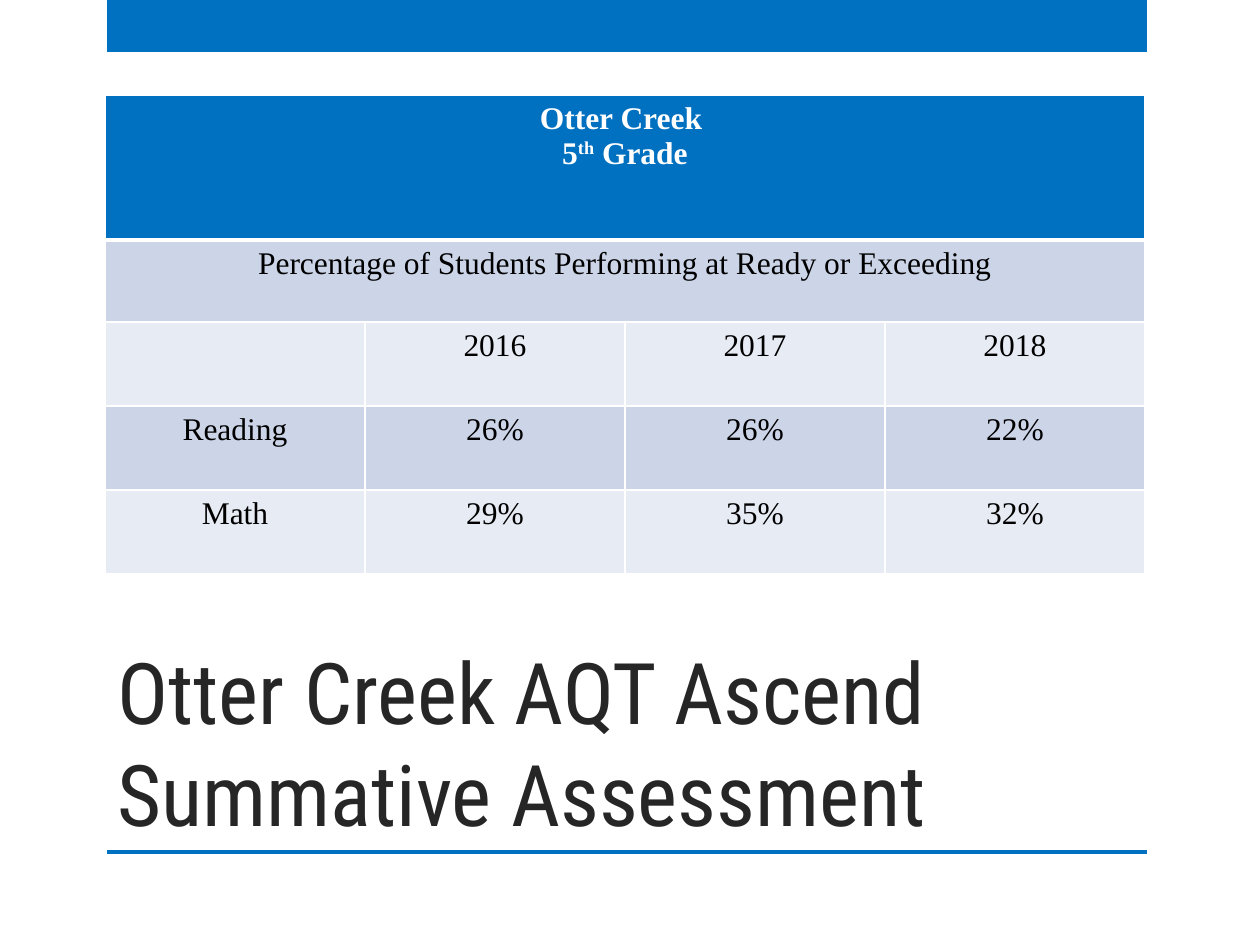
import pptx
import pptx.util
import pptx.dml.color
import pptx.enum.shapes
import pptx.enum.text
import pptx.oxml

PX = 914400 // 126
COLORS = {
    "blue": "0070C0",
    "dark": "CCD5E8",
    "light": "E7EBF4",
    "white": "FFFFFF",
    "black": "000000",
    "title": "262626",
}
ROWS = [
    ["", "2016", "2017", "2018"],
    ["Reading", "26%", "26%", "22%"],
    ["Math", "29%", "35%", "32%"],
]
HEIGHTS = [145, 82, 84, 84, 84]
COLS = 4
NS = "http://schemas.openxmlformats.org/drawingml/2006/main"


def color(name):
    return pptx.dml.color.RGBColor.from_string(COLORS[name])


def scale(*sizes):
    return [size * PX for size in sizes]


def add_bar(slide, *box):
    kind = pptx.enum.shapes.MSO_SHAPE.RECTANGLE
    bar = slide.shapes.add_shape(kind, *scale(*box))
    bar.shadow.inherit = False
    bar.fill.solid()
    bar.fill.fore_color.rgb = color("blue")
    bar.line.fill.background()


def set_title(slide, text, *box):
    title = slide.shapes.title
    title.left, title.top, title.width, title.height = scale(*box)
    frame = title.text_frame
    frame.text = text
    frame.word_wrap = True
    frame.auto_size = pptx.enum.text.MSO_AUTO_SIZE.NONE
    frame.vertical_anchor = pptx.enum.text.MSO_ANCHOR.BOTTOM
    para = frame.paragraphs[0]
    para.alignment = pptx.enum.text.PP_ALIGN.LEFT
    para.font.name = "Roboto Condensed"
    para.font.size = pptx.util.Pt(48.6)
    para.font.color.rgb = color("title")


def set_edges(cell, row):
    """Draw white borders, with a thick rule between the header and the rest."""
    props = cell._tc.get_or_add_tcPr()
    thick = {(0, "B"), (1, "T")}
    for side in "LRTB":
        width = pptx.util.Pt(3 if (row, side) in thick else 1)
        props.append(pptx.oxml.parse_xml(
            f'<a:ln{side} xmlns:a="{NS}" w="{width}"><a:solidFill>'
            f'<a:srgbClr val="{COLORS["white"]}"/></a:solidFill></a:ln{side}>'))


def style_text(cell, ink, bold):
    for para in cell.text_frame.paragraphs:
        para.alignment = pptx.enum.text.PP_ALIGN.CENTER
        para.font.name = "Times New Roman"
        para.font.size = pptx.util.Pt(18)
        para.font.bold = bold
        para.font.color.rgb = color(ink)


def fill_head(cell):
    frame = cell.text_frame
    frame.text = "Otter Creek "
    grade = frame.add_paragraph()
    for text in ("5", "th", " Grade"):
        run = grade.add_run()
        run.text = text
        if text == "th":
            run.font._element.set("baseline", "30000")


def add_scores(slide, *box):
    frame = slide.shapes.add_table(len(HEIGHTS), COLS, *scale(*box))
    table = frame.table
    for row, height in zip(table.rows, HEIGHTS):
        row.height = height * PX
    for row in (0, 1):
        table.cell(row, 0).merge(table.cell(row, COLS - 1))
    fill_head(table.cell(0, 0))
    table.cell(1, 0).text = "Percentage of Students Performing at Ready or Exceeding"
    for row, values in enumerate(ROWS, 2):
        for col, value in enumerate(values):
            table.cell(row, col).text = value
    for row in range(len(HEIGHTS)):
        head = row == 0
        shade = "blue" if head else ("light", "dark")[row % 2]
        for col in range(COLS):
            cell = table.cell(row, col)
            set_edges(cell, row)
            cell.fill.solid()
            cell.fill.fore_color.rgb = color(shade)
            style_text(cell, "white" if head else "black", head)


def main():
    deck = pptx.Presentation()
    deck.slide_width, deck.slide_height = scale(1260, 945)
    slide = deck.slides.add_slide(deck.slide_layouts[5])
    add_bar(slide, 107, 0, 1040, 52)
    add_bar(slide, 107, 850, 1040, 4)
    set_title(slide, "Otter Creek AQT Ascend Summative Assessment",
              105, 630, 935, 220)
    add_scores(slide, 105, 95, 1040, sum(HEIGHTS))
    deck.save("out.pptx")


if __name__ == "__main__":
    main()
